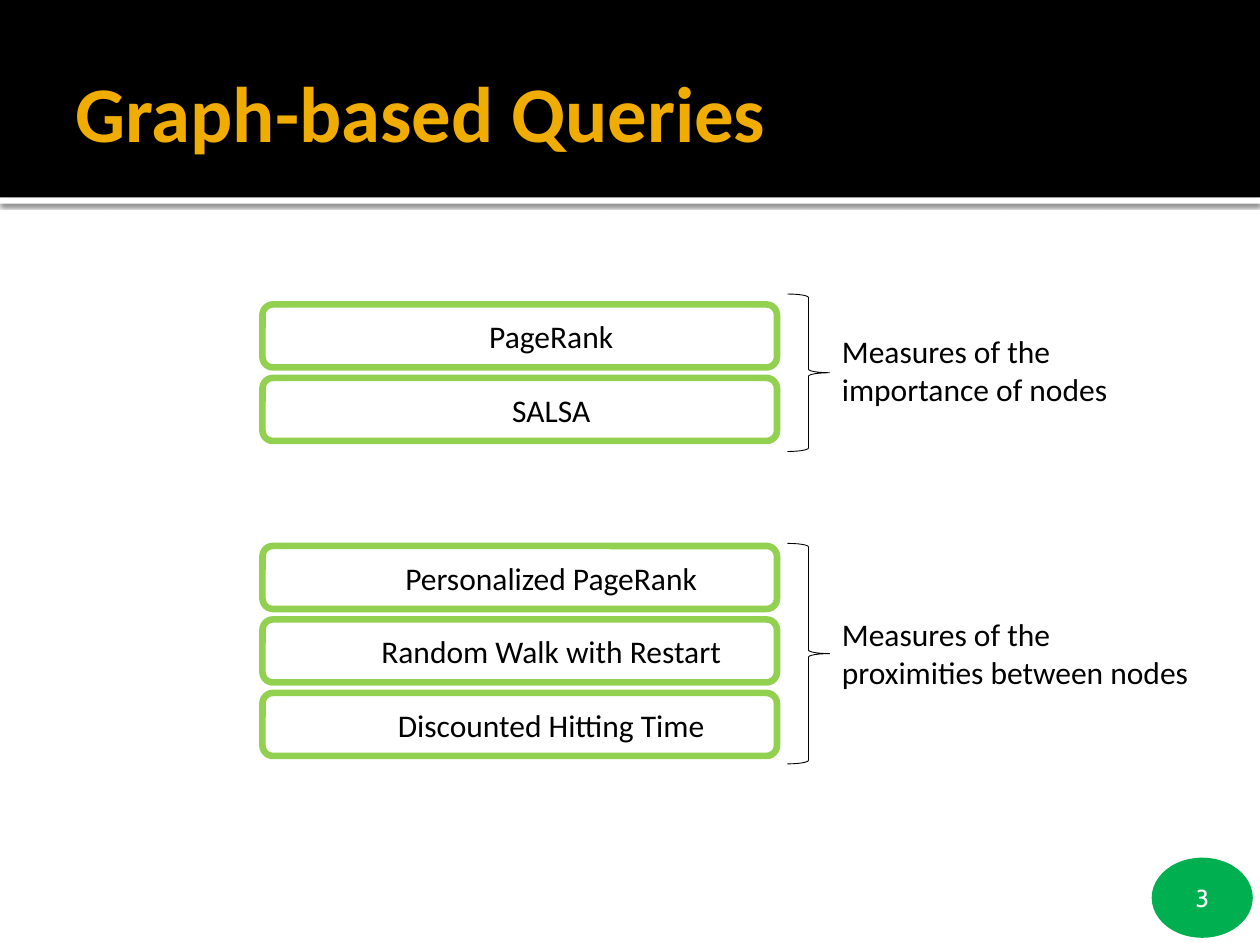
from lxml.etree import SubElement
from pptx import Presentation
from pptx.dml.color import RGBColor
from pptx.enum.shapes import MSO_SHAPE
from pptx.enum.text import MSO_ANCHOR, PP_ALIGN
from pptx.oxml.ns import qn
from pptx.util import Inches, Pt

CELL = Inches(1) / 12
COLUMNS, ROWS = 120, 90
ROW_PITCH = 7
BODY = {"size": Pt(18), "name": "Calibri", "color": "000000"}
HEADING = {"size": Pt(45), "name": "Calibri", "bold": True, "color": "F0AD00"}
NUMBER = {"size": Pt(14), "name": "Cabin", "color": "FFFFFF"}
GROUPS = [
    {
        "queries": ["PageRank", "SALSA"],
        "top": 29,
        "brace": (75, 28, 4, 15),
        "label": (79, 31, 31, 8.5),
        "meaning": "Measures of the importance of nodes",
    },
    {
        "queries": ["Personalized PageRank", "Random Walk with Restart", "Discounted Hitting Time"],
        "top": 52,
        "brace": (75, 51.75, 4, 21),
        "label": (79, 58, 36, 8.5),
        "meaning": "Measures of the proximities between nodes",
    },
]


def rgb(value):
    return RGBColor.from_string(value)


def place(cells):
    return [round(cell * CELL) for cell in cells]


def write(target, text, style, align=PP_ALIGN.LEFT, **frame_format):
    frame = target.text_frame
    for key, value in {"word_wrap": True, **frame_format}.items():
        setattr(frame, key, value)
    paragraph = frame.paragraphs[0]
    paragraph.alignment = align
    run = paragraph.add_run()
    run.text = text
    for key, value in style.items():
        if key == "color":
            run.font.color.rgb = rgb(value)
        else:
            setattr(run.font, key, value)
    return paragraph


def add_form(slide, kind, cells, fill=None, line=None, width=3.78):
    form = slide.shapes.add_shape(kind, *place(cells))
    form.shadow.inherit = False
    if fill:
        form.fill.solid()
        form.fill.fore_color.rgb = rgb(fill)
    else:
        form.fill.background()
    if line:
        form.line.color.rgb = rgb(line)
        form.line.width = Pt(width)
    else:
        form.line.fill.background()
    return form


def add_label(slide, cells, text, style, **frame_format):
    label = slide.shapes.add_textbox(*place(cells))
    write(label, text, style, **frame_format)


def cast_shadow(form):
    effects = form._element.spPr.find(qn("a:effectLst"))
    shadow = SubElement(effects, qn("a:outerShdw"), blurRad=str(Pt(2.5)),
                        dist=str(Pt(0.8)), dir="5400000", algn="tl", rotWithShape="0")
    tint = SubElement(shadow, qn("a:srgbClr"), val="000000")
    SubElement(tint, qn("a:alpha"), val="60000")


def add_header(slide):
    band_height = 18.8
    strip = add_form(slide, MSO_SHAPE.RECTANGLE, (0, band_height, COLUMNS, 0.6), "FFFFFF")
    cast_shadow(strip)
    add_form(slide, MSO_SHAPE.RECTANGLE, (0, 0, COLUMNS, band_height), "000000")
    add_label(slide, (6, 3.6, 108, 14), "Graph-based Queries", HEADING,
              vertical_anchor=MSO_ANCHOR.MIDDLE, margin_right=Inches(0.05))


def add_page_number(slide):
    badge = add_form(slide, MSO_SHAPE.OVAL, (110, ROWS - 8, 9, 7), "00B050", "00B050")
    write(badge, "3", NUMBER, PP_ALIGN.CENTER, vertical_anchor=MSO_ANCHOR.MIDDLE)


def add_query(slide, row, name):
    query = add_form(slide, MSO_SHAPE.ROUNDED_RECTANGLE, (25, row, 49, 6), "FFFFFF", "92D050")
    paragraph = write(query, name, BODY, PP_ALIGN.CENTER, vertical_anchor=MSO_ANCHOR.MIDDLE)
    indent = {"marL": str(Inches(0.5)), "indent": "0", "lvl": "1"}
    for key, value in indent.items():
        paragraph._p.get_or_add_pPr().set(key, value)


def add_group(slide, group):
    for index, name in enumerate(group["queries"]):
        add_query(slide, group["top"] + index * ROW_PITCH, name)
    add_form(slide, MSO_SHAPE.RIGHT_BRACE, group["brace"], line="000000", width=0.5)
    add_label(slide, group["label"], group["meaning"], BODY)


def main():
    deck = Presentation()
    deck.slide_width, deck.slide_height = place((COLUMNS, ROWS))
    slide = deck.slides.add_slide(deck.slide_layouts[6])
    add_header(slide)
    add_page_number(slide)
    for group in GROUPS:
        add_group(slide, group)
    deck.save("out.pptx")


if __name__ == "__main__":
    main()
